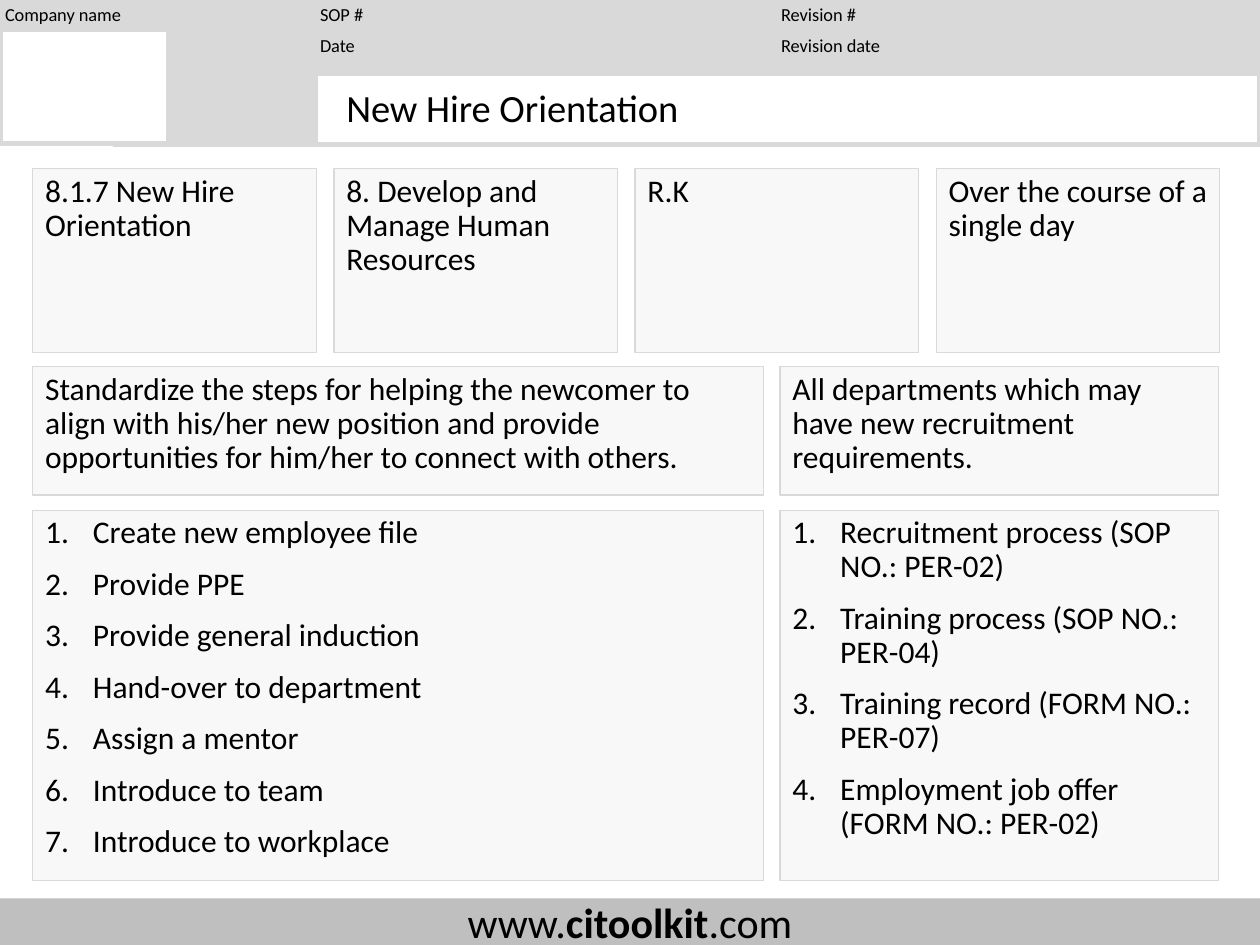
from pptx import Presentation
from pptx.dml.color import RGBColor
from pptx.enum.shapes import MSO_SHAPE
from pptx.enum.text import MSO_ANCHOR, PP_ALIGN
from pptx.oxml.ns import qn
from pptx.util import Inches, Pt
from lxml import etree

RECTANGLE = MSO_SHAPE.RECTANGLE
TOP, MIDDLE = MSO_ANCHOR.TOP, MSO_ANCHOR.MIDDLE
LEFT, CENTER = PP_ALIGN.LEFT, PP_ALIGN.CENTER

BLACK = RGBColor(0x00, 0x00, 0x00)
WHITE = RGBColor(0xFF, 0xFF, 0xFF)
HEADER_GRAY = RGBColor(0xD9, 0xD9, 0xD9)
FOOTER_GRAY = RGBColor(0xBF, 0xBF, 0xBF)
PANEL_GRAY = RGBColor(0xF8, 0xF8, 0xF8)

FONT = "Calibri"
MARGIN, COLUMN_STEP = 0.26, 2.39
WIDE, NARROW_LEFT, NARROW = 5.8, 6.19, 3.48
SUMMARY_TOP, SUMMARY_HEIGHT = 2.91, 1.02
LIST_TOP, LIST_HEIGHT = 4.05, 2.94

HEADER_LABELS = [
    (0, 0, "Company name"),
    (2.5, 0, "SOP #"),
    (6.16, 0, "Revision #"),
    (2.5, 0.24, "Date"),
    (6.16, 0.24, "Revision date"),
]
DETAILS = [
    "8.1.7 New Hire Orientation",
    "8. Develop and Manage Human Resources",
    "R.K",
    "Over the course of a single day",
]
PURPOSE = (
    "Standardize the steps for helping the newcomer to align with his/her new "
    "position and provide opportunities for him/her to connect with others."
)
SCOPE = "All departments which may have new recruitment requirements."
STEPS = [
    "Create new employee file",
    "Provide PPE",
    "Provide general induction",
    "Hand-over to department",
    "Assign a mentor",
    "Introduce to team",
    "Introduce to workplace",
]
REFERENCES = [
    "Recruitment process (SOP NO.: PER-02)",
    "Training process (SOP NO.: PER-04)",
    "Training record (FORM NO.: PER-07)",
    "Employment job offer (FORM NO.: PER-02)",
]


def add_block(slide, box, fill, line=None, line_width=3):
    block = slide.shapes.add_shape(RECTANGLE, *map(Inches, box))
    block.shadow.inherit = False
    block.fill.solid()
    block.fill.fore_color.rgb = fill
    if line is None:
        block.line.fill.background()
    else:
        block.line.color.rgb = line
        block.line.width = Pt(line_width)
    return block


def add_run(paragraph, text, size, bold=False):
    run = paragraph.add_run()
    run.text = text
    run.font.name = FONT
    run.font.size = Pt(size)
    run.font.bold = bold
    run.font.color.rgb = BLACK


def number_paragraph(paragraph):
    properties = paragraph._p.get_or_add_pPr()
    properties.set("marL", str(Inches(0.38)))
    properties.set("indent", str(-Inches(0.38)))
    numbering = etree.SubElement(properties, qn("a:buAutoNum"))
    numbering.set("type", "arabicPeriod")


def add_panel(slide, box, lines, numbered=False):
    panel = add_block(slide, box, PANEL_GRAY, HEADER_GRAY, 0.75)
    frame = panel.text_frame
    frame.word_wrap = True
    frame.vertical_anchor = TOP
    for index, line in enumerate(lines):
        paragraph = frame.add_paragraph() if index else frame.paragraphs[0]
        if numbered:
            number_paragraph(paragraph)
        paragraph.alignment = LEFT
        paragraph.line_spacing = 0.9
        if index:
            paragraph.space_before = Pt(10)
        add_run(paragraph, line, 18)


def add_label(slide, box, text, size, side_inset, edge_inset):
    label = slide.shapes.add_textbox(*map(Inches, box))
    frame = label.text_frame
    frame.word_wrap = True
    frame.vertical_anchor = MIDDLE
    frame.margin_left = frame.margin_right = Inches(side_inset)
    frame.margin_top = frame.margin_bottom = Inches(edge_inset)
    add_run(frame.paragraphs[0], text, size)
    return label


def add_header(slide):
    add_block(slide, (0.91, 0.58, 1.58, 0.57), HEADER_GRAY, HEADER_GRAY)
    add_block(slide, (0, 0, 10, 0.57), HEADER_GRAY, HEADER_GRAY)
    add_block(slide, (0, 0.23, 1.34, 0.91), WHITE, HEADER_GRAY)
    add_block(slide, (2.5, 0.58, 7.5, 0.57), WHITE, HEADER_GRAY)
    for left, top, text in HEADER_LABELS:
        add_label(slide, (left, top, 2.5, 0.23), text, 10.5, 0.04, 0.02)
    title = add_label(slide, (2.65, 0.66, 7.03, 0.43),
                      "New Hire Orientation", 22, 0.1, 0.05)
    title.text_frame.paragraphs[0].line_spacing = 0.9


def add_footer(slide):
    footer = add_block(slide, (0, 7.13, 10, 0.37), FOOTER_GRAY)
    footer.text_frame.vertical_anchor = MIDDLE
    address = footer.text_frame.paragraphs[0]
    address.alignment = CENTER
    add_run(address, "www.", 24)
    add_run(address, "citoolkit", 24, bold=True)
    add_run(address, ".com", 24)


def main():
    presentation = Presentation()
    presentation.slide_width = Inches(10)
    presentation.slide_height = Inches(7.5)
    slide = presentation.slides.add_slide(presentation.slide_layouts[6])

    add_header(slide)
    add_footer(slide)
    for column, detail in enumerate(DETAILS):
        left = MARGIN + column * COLUMN_STEP
        add_panel(slide, (left, 1.34, 2.25, 1.46), [detail])
    for left, width, summary, items in (
        (MARGIN, WIDE, PURPOSE, STEPS),
        (NARROW_LEFT, NARROW, SCOPE, REFERENCES),
    ):
        add_panel(slide, (left, SUMMARY_TOP, width, SUMMARY_HEIGHT), [summary])
        add_panel(slide, (left, LIST_TOP, width, LIST_HEIGHT), items, numbered=True)

    presentation.save("out.pptx")


if __name__ == "__main__":
    main()
